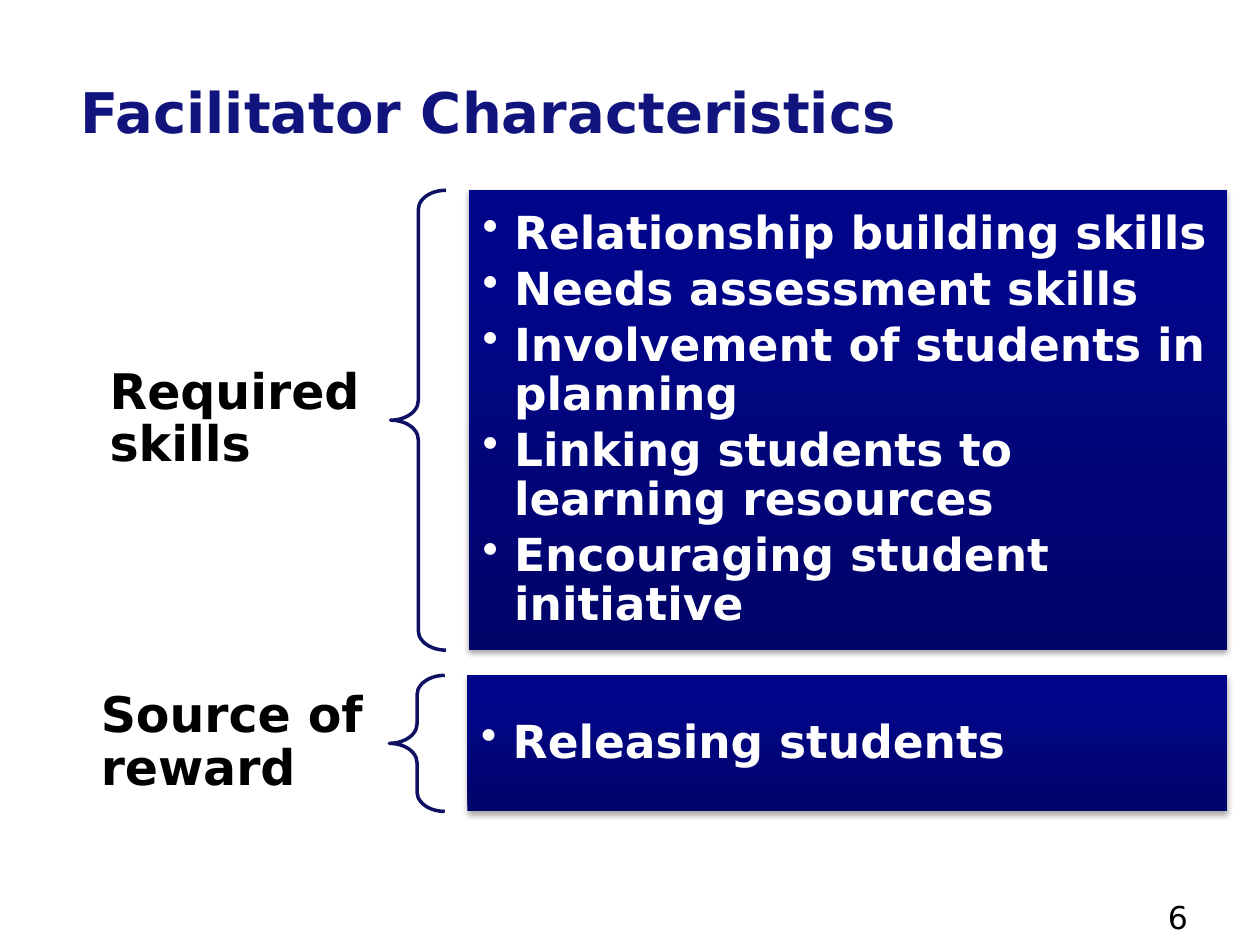
from copy import deepcopy

from lxml import etree
from pptx import Presentation
from pptx.dml.color import RGBColor
from pptx.enum.shapes import MSO_SHAPE
from pptx.enum.text import MSO_ANCHOR, PP_ALIGN
from pptx.oxml.ns import qn
from pptx.util import Inches, Pt

FONT = "DejaVu Sans"
COLORS = {
    "title": "11147D",
    "text": "000000",
    "panel_text": "FFFFFF",
    "brace": "0E1064",
    "shadow": "000000",
    "panel_bottom": "010469",
    "panel_middle": "010589",
    "panel_top": "00048A",
}
PANEL_STOPS = [(0, "panel_bottom"), (0.8, "panel_middle"), (1, "panel_top")]
RECTANGLE, LEFT_BRACE = MSO_SHAPE.RECTANGLE, MSO_SHAPE.LEFT_BRACE
MIDDLE, TOP = MSO_ANCHOR.MIDDLE, MSO_ANCHOR.TOP
LEFT = PP_ALIGN.LEFT

# Label box, panel box and panel lines of each group
GROUPS = [
    {
        "label": "Required skills",
        "label_box": (0.65, 2.79, 2.85, 1.08),
        "panel_box": (3.72, 1.51, 6.02, 3.65),
        "points": [
            "Relationship building skills",
            "Needs assessment skills",
            "Involvement of students in planning",
            "Linking students to learning resources",
            "Encouraging student initiative",
        ],
    },
    {
        "label": "Source of reward",
        "label_box": (0.58, 5.36, 2.84, 1.08),
        "panel_box": (3.71, 5.36, 6.03, 1.08),
        "points": ["Releasing students"],
    },
]
BRACE_WIDTH = 0.44
BRACE_OFFSET = 0.62


def color(name):
    return RGBColor.from_string(COLORS[name])


def inches(box):
    return [Inches(value) for value in box]


def set_frame(text_frame, anchor, inset_x, inset_y):
    text_frame.word_wrap = True
    text_frame.vertical_anchor = anchor
    text_frame.margin_left = text_frame.margin_right = Inches(inset_x)
    text_frame.margin_top = text_frame.margin_bottom = Inches(inset_y)


def style_paragraph(paragraph, size, color_name, bold=True):
    paragraph.alignment = LEFT
    font = paragraph.font
    font.name, font.size, font.bold = FONT, Pt(size), bold
    font.color.rgb = color(color_name)


def add_text(slide, box, text, size, color_name, bold=True, anchor=MIDDLE,
             inset=(0.1, 0.05), line_spacing=1.0):
    text_frame = slide.shapes.add_textbox(*inches(box)).text_frame
    set_frame(text_frame, anchor, *inset)
    text_frame.text = text
    paragraph = text_frame.paragraphs[0]
    paragraph.line_spacing = line_spacing
    style_paragraph(paragraph, size, color_name, bold)


def add_brace(slide, box):
    brace = slide.shapes.add_shape(LEFT_BRACE, *inches(box))
    brace.adjustments[0] = 0.35
    brace.shadow.inherit = False
    brace.fill.background()
    brace.line.color.rgb = color("brace")
    brace.line.width = Pt(2)


def fill_gradient(shape):
    shape.fill.gradient()
    shape.fill.gradient_angle = 90
    stop_list = shape.fill._xPr.find(".//" + qn("a:gsLst"))
    stop_list.append(deepcopy(stop_list[-1]))
    for stop, (position, name) in zip(shape.fill.gradient_stops, PANEL_STOPS):
        stop.position = position
        stop.color.rgb = color(name)


def add_shadow(shape):
    shape.shadow.inherit = False
    effects = shape._element.spPr.find(qn("a:effectLst"))
    shadow = etree.SubElement(
        effects, qn("a:outerShdw"), blurRad=str(Pt(3.1)), dist=str(Pt(1.8)),
        dir="5400000", rotWithShape="0")
    shade = etree.SubElement(shadow, qn("a:srgbClr"), val=COLORS["shadow"])
    etree.SubElement(shade, qn("a:alpha"), val="35000")


def add_bullet(paragraph):
    properties = paragraph._p.get_or_add_pPr()
    properties.set("marL", str(Inches(0.25)))
    properties.set("indent", str(-Inches(0.25)))
    etree.SubElement(properties, qn("a:buChar"), char="•")


def add_panel(slide, box, points):
    panel = slide.shapes.add_shape(RECTANGLE, *inches(box))
    fill_gradient(panel)
    panel.line.fill.background()
    add_shadow(panel)
    text_frame = panel.text_frame
    set_frame(text_frame, MIDDLE, 0.11, 0.11)
    text_frame.text = "\n".join(points)
    for paragraph in text_frame.paragraphs:
        add_bullet(paragraph)
        paragraph.line_spacing = 0.9
        paragraph.space_after = Pt(4)
        style_paragraph(paragraph, 26, "panel_text")


def add_group(slide, group):
    left, top, _, height = group["panel_box"]
    add_text(slide, group["label_box"], group["label"], 28, "text",
             inset=(0.22, 0.08), line_spacing=0.9)
    add_brace(slide, (left - BRACE_OFFSET, top, BRACE_WIDTH, height))
    add_panel(slide, group["panel_box"], group["points"])


def main():
    presentation = Presentation()
    presentation.slide_width, presentation.slide_height = Inches(10), Inches(7.5)
    slide = presentation.slides.add_slide(presentation.slide_layouts[6])

    # Title
    add_text(slide, (0.33, 0.42, 9.5, 0.92), "Facilitator Characteristics",
             32, "title", inset=(0.31, 0.05))

    # Labelled panels
    for group in GROUPS:
        add_group(slide, group)

    # Slide number
    add_text(slide, (9.17, 7.08, 0.83, 0.27), "6", 18, "text",
             bold=False, anchor=TOP)

    presentation.save("out.pptx")


if __name__ == "__main__":
    main()
